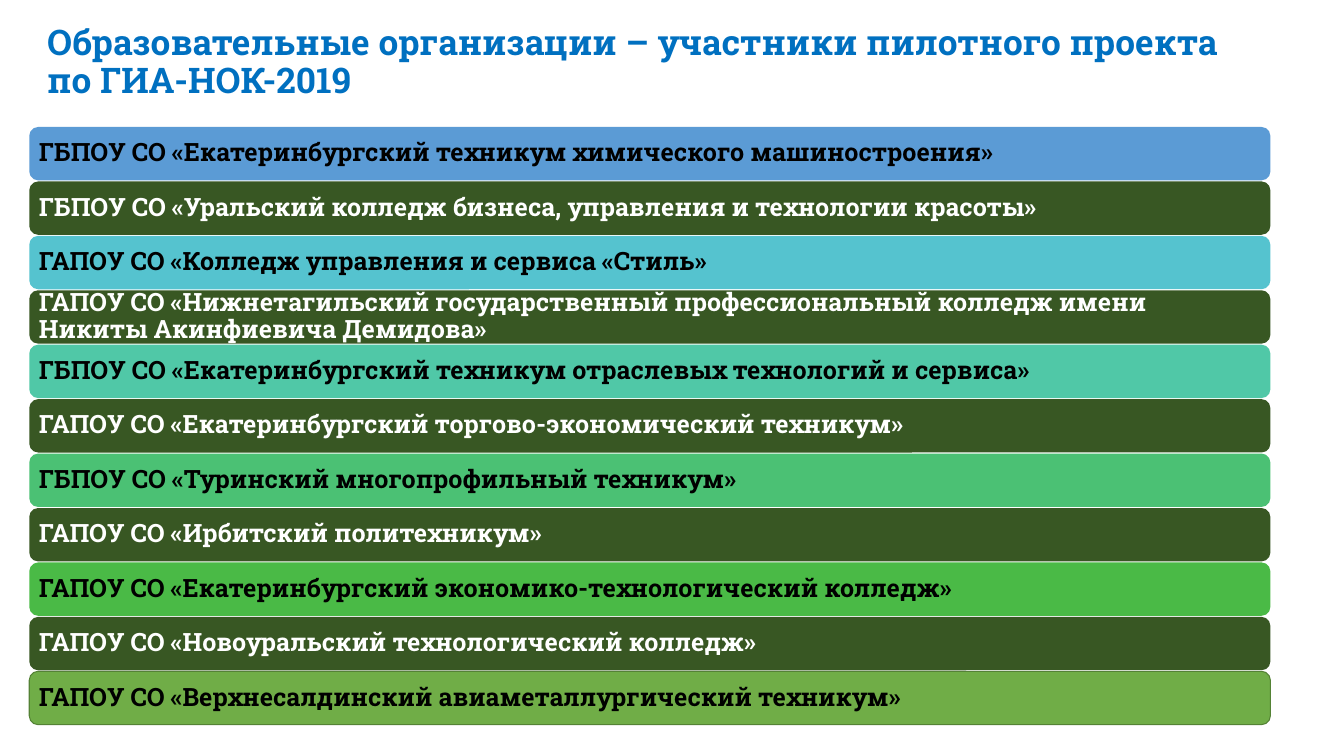
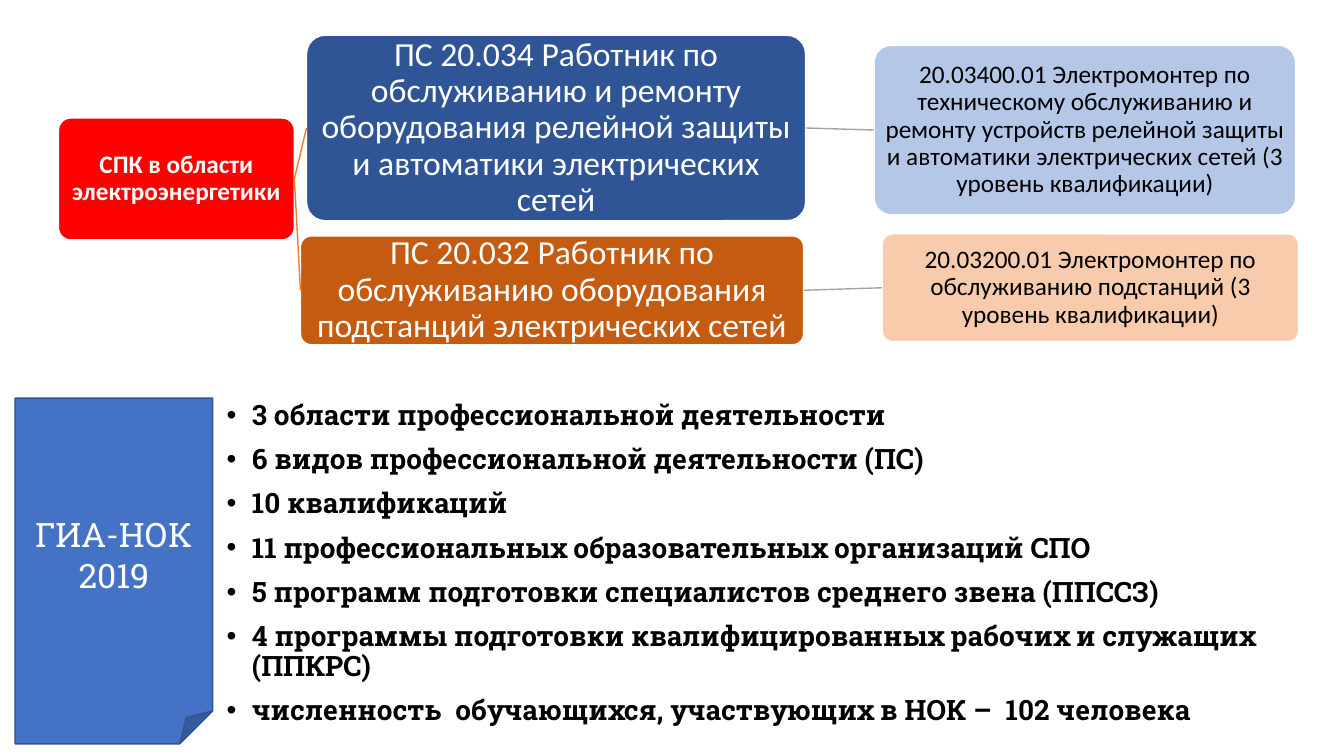
import pptx
import pptx.dml.color
import pptx.enum.shapes
import pptx.enum.text
import pptx.oxml.ns
import pptx.util
from lxml import etree

Inches = pptx.util.Inches
Pt = pptx.util.Pt
RGB = pptx.dml.color.RGBColor.from_string
SHAPE = pptx.enum.shapes.MSO_SHAPE
ALIGN = pptx.enum.text.PP_ALIGN
ANCHOR = pptx.enum.text.MSO_ANCHOR
qn = pptx.oxml.ns.qn


class Theme:
    slab = "Roboto Slab"
    sans = "Calibri"
    title_size = 25.2
    big_size = 24
    list_size = 20
    body_size = 18
    title = "0070C0"
    black = "000000"
    white = "FFFFFF"
    dark_green = "385723"
    green_edge = "548235"
    red = "FF0000"
    blue = "2F5597"
    light_blue = "B4C7E7"
    orange = "C55A11"
    light_orange = "F8CBAD"
    orange_line = "ED7D31"
    grey_line = "A5A5A5"
    note = "4472C4"
    note_edge = "325491"


def write(sp, *lines, size=Theme.body_size, font=Theme.slab, color=Theme.black,
          bold=False, align=ALIGN.LEFT, anchor=ANCHOR.MIDDLE, spacing=0.9,
          before=0, insets=(0.1, 0.05), bullet=None):
    tf = sp.text_frame
    tf.word_wrap = True
    tf.vertical_anchor = anchor
    tf.margin_left = tf.margin_right = Inches(insets[0])
    tf.margin_top = tf.margin_bottom = Inches(insets[1])
    for i, line in enumerate(lines):
        p = tf.add_paragraph() if i else tf.paragraphs[0]
        p.alignment = align
        p.line_spacing = spacing
        p.space_before = Pt(before)
        if bullet:
            pPr = p._p.get_or_add_pPr()
            pPr.set("marL", str(Inches(0.25)))
            pPr.set("indent", str(-Inches(0.25)))
            etree.SubElement(pPr, qn("a:buFont")).set("typeface", "Arial")
            etree.SubElement(pPr, qn("a:buChar")).set("char", bullet)
        r = p.add_run()
        r.text = line
        r.font.size = Pt(size)
        r.font.name = font
        r.font.bold = bold
        r.font.color.rgb = RGB(color)


def add_box(s, kind, at, fill, line=None, width=1, adj=None):
    sp = s.shapes.add_shape(kind, *map(Inches, at))
    sp.shadow.inherit = False
    sp.fill.solid()
    sp.fill.fore_color.rgb = RGB(fill)
    if line:
        sp.line.color.rgb = RGB(line)
        sp.line.width = Pt(width)
    else:
        sp.line.fill.background()
    if adj is not None:
        sp.adjustments[0] = adj
    return sp


prs = pptx.Presentation()
prs.slide_width = Inches(13.33)
prs.slide_height = Inches(7.5)
blank = prs.slide_layouts[6]

s = prs.slides.add_slide(blank)
title = s.shapes.add_textbox(Inches(0.37), Inches(0.18), Inches(12.31), Inches(0.89))
write(title, "Образовательные организации – участники пилотного проекта по ГИА-НОК-2019",
      size=Theme.title_size, color=Theme.title, bold=True)

colleges = [
    ("ГБПОУ СО «Екатеринбургский техникум химического машиностроения»", "5B9BD5"),
    ("ГБПОУ СО «Уральский колледж бизнеса, управления и технологии красоты»", Theme.dark_green),
    ("ГАПОУ СО «Колледж управления и сервиса «Стиль»", "55C3CF"),
    ("ГАПОУ СО «Нижнетагильский государственный профессиональный колледж имени "
     "Никиты Акинфиевича Демидова»", Theme.dark_green),
    ("ГБПОУ СО «Екатеринбургский техникум отраслевых технологий и сервиса»", "50C8A7"),
    ("ГАПОУ СО «Екатеринбургский торгово-экономический техникум»", Theme.dark_green),
    ("ГБПОУ СО «Туринский многопрофильный техникум»", "4BC174"),
    ("ГАПОУ СО «Ирбитский политехникум»", Theme.dark_green),
    ("ГАПОУ СО «Екатеринбургский экономико-технологический колледж»", "4ABA46"),
    ("ГАПОУ СО «Новоуральский технологический колледж»", Theme.dark_green),
    ("ГАПОУ СО «Верхнесалдинский авиаметаллургический техникум»", "70AD47"),
]
for i, (name, fill) in enumerate(colleges):
    edge = Theme.green_edge if i == len(colleges) - 1 else None
    sp = add_box(s, SHAPE.ROUNDED_RECTANGLE, (0.29, 1.26 + 0.54 * i, 12.31, 0.53),
                 fill, edge, 0.75)
    write(sp, name, color=Theme.white if fill == Theme.dark_green else Theme.black,
          bold=True, insets=(0.07, 0.07))

s = prs.slides.add_slide(blank)
nodes = {
    "council": ((0.58, 1.17, 2.34, 1.21), Theme.red, Theme.white, Theme.body_size,
                "СПК в области электроэнергетики"),
    "relay": ((3.04, 0.35, 4.95, 1.84), Theme.blue, Theme.white, Theme.big_size,
              "ПС 20.034 Работник по обслуживанию и ремонту оборудования релейной "
              "защиты и автоматики электрических сетей"),
    "relay_job": ((8.67, 0.45, 4.18, 1.68), Theme.light_blue, Theme.black, Theme.body_size,
                  "20.03400.01 Электромонтер по техническому обслуживанию и ремонту "
                  "устройств релейной защиты и автоматики электрических сетей "
                  "(3 уровень квалификации)"),
    "station": ((2.98, 2.34, 4.99, 1.08), Theme.orange, Theme.white, Theme.big_size,
                "ПС 20.032 Работник по обслуживанию оборудования подстанций "
                "электрических сетей"),
    "station_job": ((8.75, 2.32, 4.13, 1.07), Theme.light_orange, Theme.black, Theme.body_size,
                    "20.03200.01 Электромонтер по обслуживанию подстанций "
                    "(3 уровень квалификации)"),
}
boxes = {}
for key, (at, fill, color, size, text) in nodes.items():
    boxes[key] = add_box(s, SHAPE.ROUNDED_RECTANGLE, at, fill, Theme.white, adj=0.1)
    write(boxes[key], text, size=size, font=Theme.sans, color=color,
          bold=key == "council", align=ALIGN.CENTER, insets=(0.015, 0.015))

links = [
    ("council", "relay", Theme.orange_line),
    ("council", "station", Theme.orange_line),
    ("relay", "relay_job", Theme.grey_line),
    ("station", "station_job", Theme.grey_line),
]
for start, end, color in links:
    link = s.shapes.add_connector(pptx.enum.shapes.MSO_CONNECTOR.STRAIGHT, 0, 0, 0, 0)
    link.begin_connect(boxes[start], 3)
    link.end_connect(boxes[end], 1)
    link.line.color.rgb = RGB(color)
    link.line.width = Pt(1)
    etree.SubElement(link._element.spPr, qn("a:effectLst"))

facts = s.shapes.add_textbox(Inches(2.15), Inches(3.93), Inches(11.18), Inches(3.57))
write(facts,
      "3 области профессиональной деятельности",
      "6 видов профессиональной деятельности (ПС)",
      "10 квалификаций",
      "11 профессиональных образовательных организаций СПО",
      "5 программ подготовки специалистов среднего звена (ППССЗ)",
      "4 программы подготовки квалифицированных рабочих и служащих (ППКРС)",
      "численность  обучающихся, участвующих в НОК –  102 человека",
      size=Theme.list_size, bold=True, anchor=ANCHOR.TOP, before=10, bullet="•")

note = add_box(s, SHAPE.FOLDED_CORNER, (0.15, 3.95, 1.96, 3.43), Theme.note, Theme.note_edge)
write(note, "ГИА-НОК 2019", size=Theme.big_size, color=Theme.white,
      align=ALIGN.CENTER, spacing=1.0)

prs.save("out.pptx")
